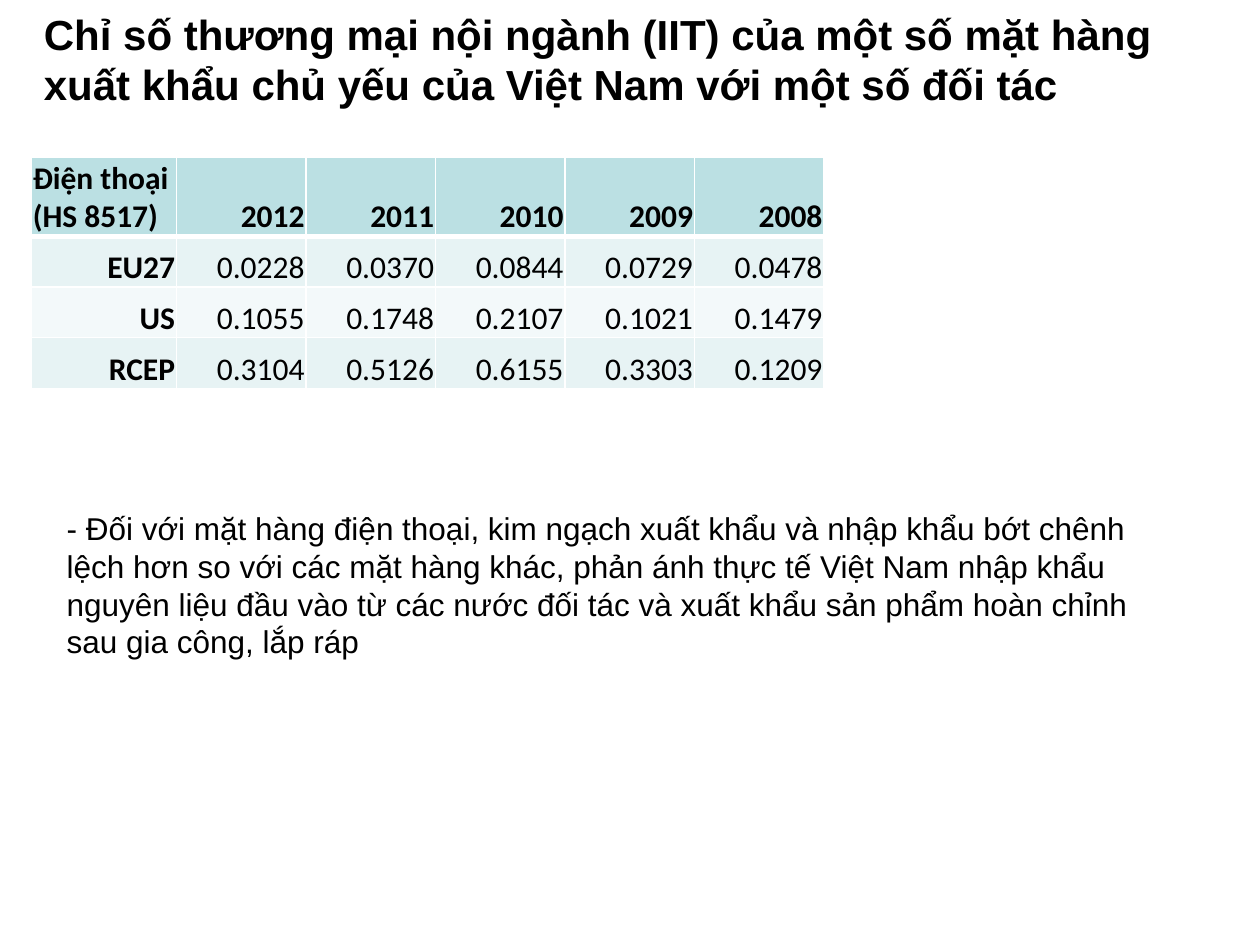
from pptx import Presentation
from pptx.dml.color import RGBColor
from pptx.enum.text import MSO_ANCHOR, PP_ALIGN
from pptx.oxml import parse_xml
from pptx.oxml.ns import nsdecls
from pptx.util import Pt

TITLE = "Chỉ số thương mại nội ngành (IIT) của một số mặt hàng xuất khẩu chủ yếu của Việt Nam với một số đối tác"
COMMENT = (
    "- Đối với mặt hàng điện thoại, kim ngạch xuất khẩu và nhập khẩu bớt chênh lệch hơn "
    "so với các mặt hàng khác, phản ánh thực tế Việt Nam nhập khẩu nguyên liệu đầu vào "
    "từ các nước đối tác và xuất khẩu sản phẩm hoàn chỉnh sau gia công, lắp ráp"
)
INDEX_ROWS = [
    ["Điện thoại\n(HS 8517)", "2012", "2011", "2010", "2009", "2008"],
    ["EU27", "0.0228", "0.0370", "0.0844", "0.0729", "0.0478"],
    ["US", "0.1055", "0.1748", "0.2107", "0.1021", "0.1479"],
    ["RCEP", "0.3104", "0.5126", "0.6155", "0.3303", "0.1209"],
]
ROW_FILLS = ["BBE0E3", "E7F3F4", "F3F9FA", "E7F3F4"]


def color(value):
    return RGBColor.from_string(value)


def apply_format(target, values):
    for name, value in values.items():
        setattr(target, name, value)


class SlideBuilder:
    text_color = "000000"
    border_color = "FFFFFF"
    cell_format = {
        "margin_left": Pt(0.75),
        "margin_right": Pt(0.75),
        "margin_top": Pt(0.75),
        "margin_bottom": Pt(0),
        "vertical_anchor": MSO_ANCHOR.BOTTOM,
    }

    def __init__(self, slide):
        self.slide = slide

    def fill_text(self, frame, text, font, spacing=None):
        frame.text = text
        for paragraph in frame.paragraphs:
            apply_format(paragraph, spacing or {})
            for run in paragraph.runs:
                apply_format(run.font, font)
                run.font.color.rgb = color(self.text_color)

    def text(self, box, text, font, anchor=MSO_ANCHOR.TOP, spacing=None):
        shape = self.slide.shapes.add_textbox(*map(Pt, box))
        apply_format(shape.text_frame, {"word_wrap": True, "vertical_anchor": anchor})
        self.fill_text(shape.text_frame, text, font, spacing)

    def borders(self, cell, widths):
        properties = cell._tc.get_or_add_tcPr()
        for position, (side, width) in enumerate(widths.items()):
            line = parse_xml(
                f'<a:{side} {nsdecls("a")} w="{Pt(width)}"><a:solidFill>'
                f'<a:srgbClr val="{self.border_color}"/></a:solidFill></a:{side}>'
            )
            properties.insert(position, line)

    def table(self, left, top, widths, heights, rows, fills):
        box = map(Pt, (left, top, sum(widths), sum(heights)))
        table = self.slide.shapes.add_table(len(rows), len(widths), *box).table
        for column, width in zip(table.columns, widths):
            column.width = Pt(width)
        for row, height in zip(table.rows, heights):
            row.height = Pt(height)
        for row_index, values in enumerate(rows):
            for column_index, value in enumerate(values):
                cell = table.cell(row_index, column_index)
                header = row_index == 0
                corner = header and column_index == 0
                apply_format(cell, self.cell_format)
                cell.fill.solid()
                cell.fill.fore_color.rgb = color(fills[row_index])
                self.borders(cell, {"lnL": 1, "lnR": 1, "lnT": 1, "lnB": 3 if header else 1})
                self.fill_text(
                    cell.text_frame,
                    value,
                    {"name": "Calibri", "size": Pt(18), "bold": header or column_index == 0},
                    {"alignment": PP_ALIGN.LEFT if corner else PP_ALIGN.RIGHT},
                )


def main():
    presentation = Presentation()
    apply_format(presentation, {"slide_width": Pt(720), "slide_height": Pt(540)})
    builder = SlideBuilder(presentation.slides.add_slide(presentation.slide_layouts[6]))
    builder.text(
        (18, 30, 677, 36),
        TITLE,
        {"name": "Arial", "size": Pt(24), "bold": True},
        MSO_ANCHOR.BOTTOM,
    )
    builder.table(18, 90, [82.8] + [74] * 5, [45] + [29] * 3, INDEX_ROWS, ROW_FILLS)
    builder.text(
        (31, 287.3, 635, 130.3),
        COMMENT,
        {"name": "Arial", "size": Pt(18)},
        spacing={"space_before": Pt(4), "space_after": Pt(10)},
    )
    presentation.save("out.pptx")


if __name__ == "__main__":
    main()
